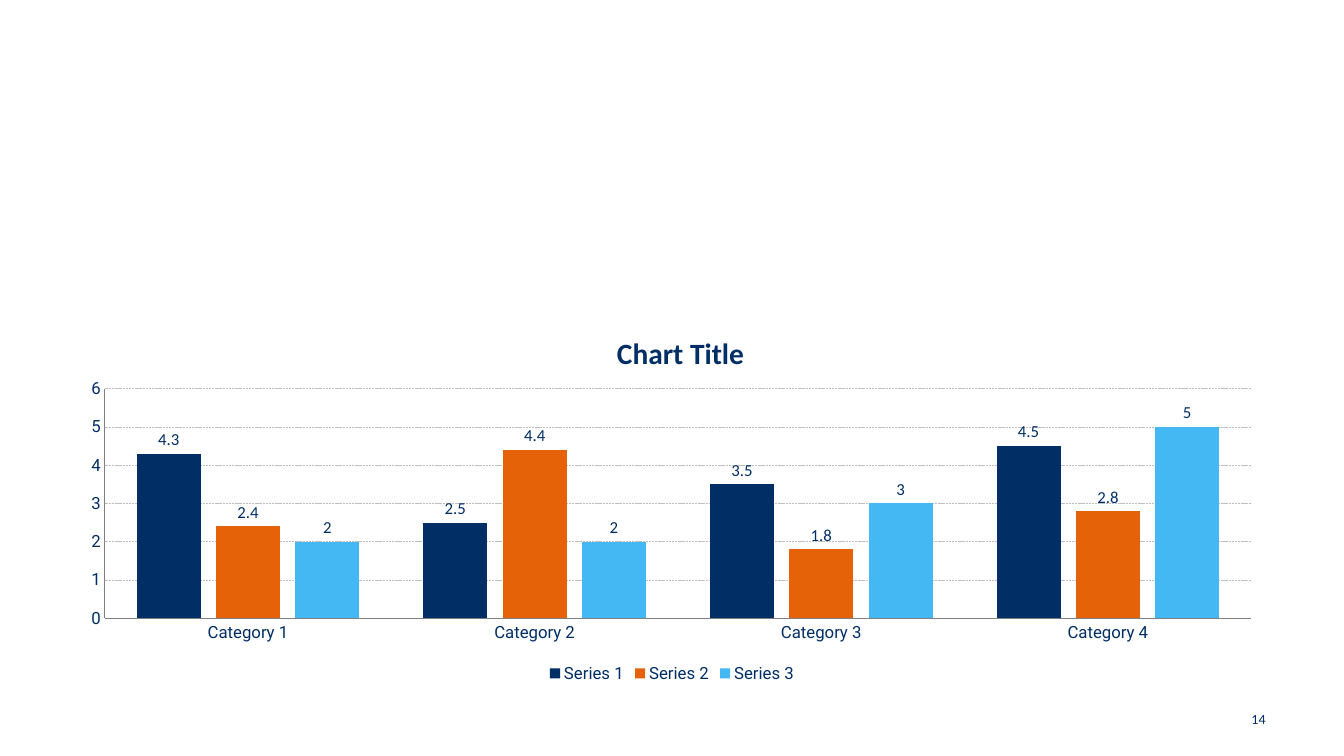
from lxml import etree
from pptx import Presentation
from pptx.chart.data import CategoryChartData
from pptx.dml.color import RGBColor
from pptx.enum.chart import XL_CHART_TYPE, XL_LABEL_POSITION, XL_LEGEND_POSITION, XL_TICK_MARK
from pptx.enum.dml import MSO_LINE
from pptx.enum.text import MSO_ANCHOR, PP_ALIGN
from pptx.oxml.ns import qn
from pptx.util import Inches, Pt

COLUMNS = XL_CHART_TYPE.COLUMN_CLUSTERED
ABOVE_BAR = XL_LABEL_POSITION.OUTSIDE_END
BOTTOM = XL_LEGEND_POSITION.BOTTOM
NO_TICK = XL_TICK_MARK.NONE
DOTTED = MSO_LINE.SQUARE_DOT
MIDDLE = MSO_ANCHOR.MIDDLE
RIGHT = PP_ALIGN.RIGHT

NAVY = RGBColor(0x00, 0x2E, 0x65)
ORANGE = RGBColor(0xE6, 0x62, 0x08)
SKY = RGBColor(0x44, 0xB8, 0xF3)
AXIS_GRAY = RGBColor(0x80, 0x80, 0x80)
GRID_GRAY = RGBColor(0xBF, 0xBF, 0xBF)

CATEGORIES = [f"Category {number}" for number in range(1, 5)]
SERIES = [
    ("Series 1", (4.3, 2.5, 3.5, 4.5), NAVY),
    ("Series 2", (2.4, 4.4, 1.8, 2.8), ORANGE),
    ("Series 3", (2, 2, 3, 5), SKY),
]


class SlideBuilder:
    """Holds the text style and the current slide."""

    heading_font = "Calibri"
    body_font = "Roboto"
    text_color = NAVY

    def __init__(self, page):
        self.page = page

    def style(self, font, size, name, bold=False):
        font.size = Pt(size)
        font.name = name
        font.bold = bold
        font.color.rgb = self.text_color

    def page_number(self, text, left, top, width, height):
        box = self.page.shapes.add_textbox(
            Inches(left), Inches(top), Inches(width), Inches(height))
        frame = box.text_frame
        frame.word_wrap = True
        frame.vertical_anchor = MIDDLE
        frame.text = text
        para = frame.paragraphs[0]
        para.alignment = RIGHT
        self.style(para.runs[0].font, 10, self.heading_font)

    def column_chart(self, left, top, width, height):
        data = CategoryChartData()
        data.categories = CATEGORIES
        for name, values, _ in SERIES:
            data.add_series(name, values)
        chart = self.page.shapes.add_chart(
            COLUMNS, Inches(left), Inches(top), Inches(width), Inches(height), data).chart
        self.style(chart.font, 10, self.body_font)

        # Columns and their value labels
        plot = chart.plots[0]
        plot.gap_width = 100
        plot.overlap = -24
        plot.vary_by_categories = False
        for series, (_, _, color) in zip(plot.series, SERIES):
            series.format.fill.solid()
            series.format.fill.fore_color.rgb = color
            labels = series.data_labels
            labels.show_value = True
            labels.position = ABOVE_BAR
            self.style(labels.font, 12, self.heading_font)
        return chart

    def axes(self, chart):
        for axis in (chart.category_axis, chart.value_axis):
            axis.major_tick_mark = axis.minor_tick_mark = NO_TICK
            self.style(axis.tick_labels.font, 12, self.body_font)
            self.line(axis.format.line, AXIS_GRAY)
        scale = chart.value_axis
        scale.minimum_scale, scale.maximum_scale, scale.major_unit = 0, 6, 1
        grid = scale.major_gridlines.format.line
        self.line(grid, GRID_GRAY)
        grid.dash_style = DOTTED

    def line(self, line, color):
        line.color.rgb = color
        line.width = Pt(0.5)

    def title(self, chart, text):
        frame = chart.chart_title.text_frame
        frame.text = text
        self.style(frame.paragraphs[0].runs[0].font, 21, self.heading_font, bold=True)

    def legend(self, chart):
        chart.has_legend = True
        chart.legend.position = BOTTOM
        chart.legend.include_in_layout = False
        self.style(chart.legend.font, 12, self.body_font)

    def place(self, chart, part, index, **settings):
        """Fix a chart part at fractions of the chart area."""
        parent = chart.element.find(".//" + qn(part))
        layout = parent.find(qn("c:layout"))
        if layout is None:
            layout = etree.Element(qn("c:layout"))
            parent.insert(index, layout)
        manual = etree.SubElement(layout, qn("c:manualLayout"))
        for name, value in settings.items():
            etree.SubElement(manual, qn("c:" + name)).set("val", str(value))


def main():
    deck = Presentation()
    deck.slide_width, deck.slide_height = Inches(13.33), Inches(7.5)
    builder = SlideBuilder(deck.slides.add_slide(deck.slide_layouts[6]))

    # Page number
    builder.page_number("14", 9.76, 6.93, 2.89, 0.4)

    # Chart with title, axes and legend
    chart = builder.column_chart(0.68, 3.02, 11.97, 3.8)
    builder.axes(chart)
    builder.title(chart, "Chart Title")
    builder.legend(chart)
    builder.place(chart, "c:title", 1, xMode="edge", yMode="edge", x=0.45, y=0.06)
    builder.place(chart, "c:plotArea", 0, layoutTarget="inner", xMode="edge",
                  yMode="edge", x=0.03, y=0.22, w=0.95, h=0.6)

    deck.save("out.pptx")


if __name__ == "__main__":
    main()
